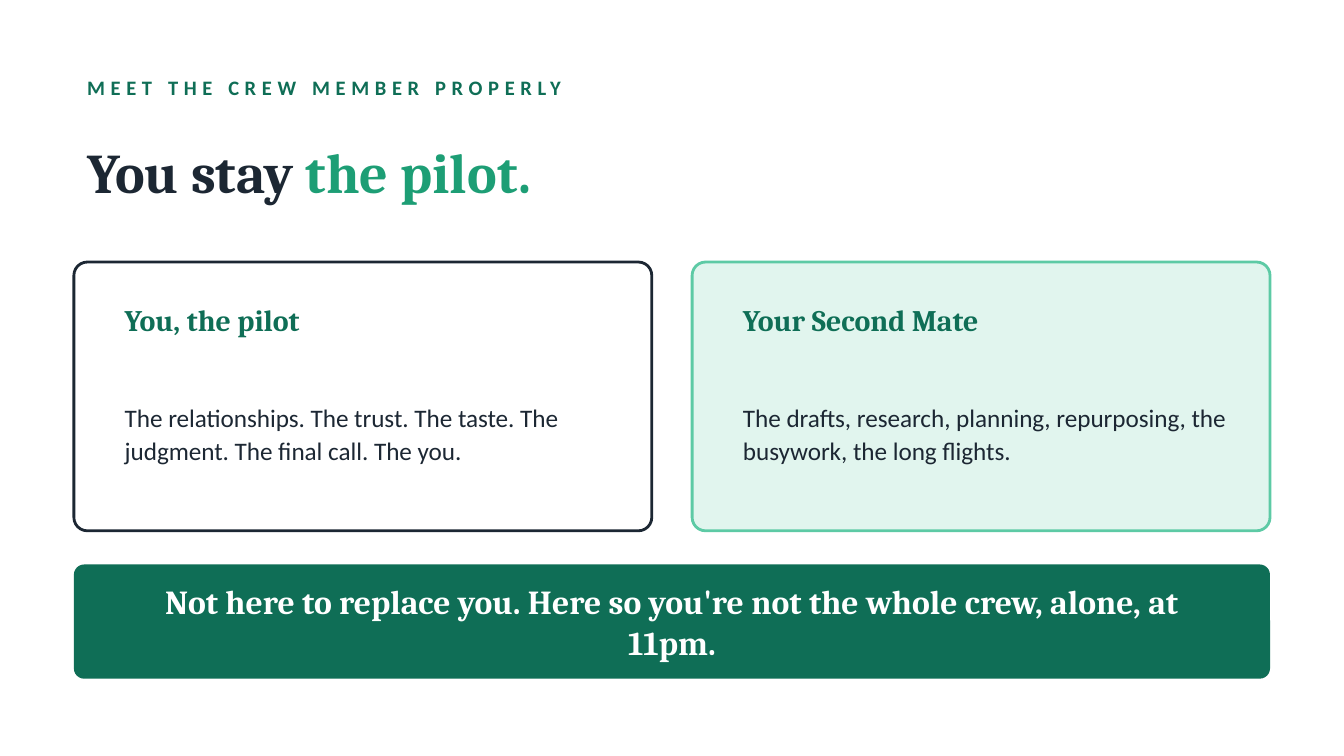
from typing import NamedTuple, Optional

from pptx import Presentation
from pptx.dml.color import RGBColor
from pptx.enum.shapes import MSO_SHAPE as Preset
from pptx.enum.text import MSO_ANCHOR as Anchor, PP_ALIGN as Align
from pptx.slide import Slide
from pptx.util import Inches, Pt

COLORS = {
    "ink": "1C2733",
    "forest": "0F6E56",
    "green": "1D9E75",
    "mint": "5DCAA5",
    "pale": "E1F5EE",
    "white": "FFFFFF",
}
SLIDE_WIDTH = 10
SLIDE_HEIGHT = SLIDE_WIDTH * 9 / 16
MARGIN, GUTTER, COLUMNS = 0.55, 0.3, 2
CONTENT_WIDTH = SLIDE_WIDTH - 2 * MARGIN
COLUMN_WIDTH = (CONTENT_WIDTH - (COLUMNS - 1) * GUTTER) / COLUMNS
CARD_TOP, CARD_HEIGHT = 1.95, 2
CARD_INDENT, CARD_TEXT_WIDTH = 0.28, 3.8
BANNER_TOP, BANNER_HEIGHT, BANNER_INSET = 4.2, 0.85, 0.25


class Box(NamedTuple):
    left: float
    top: float
    width: float
    height: float


class Words(NamedTuple):
    text: str
    size: float
    color: str
    font: str = "Cambria"
    bold: bool = True
    tracking: float = 0


class Card(NamedTuple):
    heading: str
    body: str
    fill: str
    outline: str


def rgb(name: str) -> RGBColor:
    return RGBColor.from_string(COLORS[name])


def add_words(slide: Slide, box: Box, phrases: list[Words],
              align: Align = Align.LEFT, leading: Optional[float] = None) -> None:
    frame = slide.shapes.add_textbox(*map(Inches, box)).text_frame
    frame.word_wrap = True
    frame.vertical_anchor = Anchor.MIDDLE
    paragraph = frame.paragraphs[0]
    paragraph.alignment = align
    if leading:
        paragraph.line_spacing = leading
    for phrase in phrases:
        run = paragraph.add_run()
        run.text = phrase.text
        run.font.name = phrase.font
        run.font.size = Pt(phrase.size)
        run.font.bold = phrase.bold
        run.font.color.rgb = rgb(phrase.color)
        if phrase.tracking:
            run.font._element.set("spc", str(round(phrase.tracking * 100)))


def add_panel(slide: Slide, box: Box, rounding: float, fill: str,
              outline: Optional[str] = None) -> None:
    panel = slide.shapes.add_shape(Preset.ROUNDED_RECTANGLE, *map(Inches, box))
    panel.shadow.inherit = False
    panel.adjustments[0] = rounding
    panel.fill.solid()
    panel.fill.fore_color.rgb = rgb(fill)
    if outline:
        panel.line.color.rgb = rgb(outline)
        panel.line.width = Pt(1.5)
    else:
        panel.line.fill.background()


def add_card(slide: Slide, column: int, card: Card) -> None:
    left = MARGIN + column * (COLUMN_WIDTH + GUTTER)
    text_left = left + CARD_INDENT
    add_panel(slide, Box(left, CARD_TOP, COLUMN_WIDTH, CARD_HEIGHT),
              0.05, card.fill, card.outline)
    add_words(slide, Box(text_left, CARD_TOP + 0.18, CARD_TEXT_WIDTH, 0.5),
              [Words(card.heading, 16, "forest")])
    add_words(slide, Box(text_left, CARD_TOP + 0.72, CARD_TEXT_WIDTH, 1.1),
              [Words(card.body, 13.5, "ink", "Calibri", False)], leading=1.1)


def main() -> None:
    deck = Presentation()
    deck.slide_width, deck.slide_height = Inches(SLIDE_WIDTH), Inches(SLIDE_HEIGHT)
    slide = deck.slides.add_slide(deck.slide_layouts[6])
    slide.background.fill.solid()
    slide.background.fill.fore_color.rgb = rgb("white")

    add_words(slide, Box(MARGIN, 0.5, CONTENT_WIDTH, 0.3),
              [Words("MEET THE CREW MEMBER PROPERLY", 11, "forest", "Calibri", tracking=3)])
    add_words(slide, Box(MARGIN, 0.85, CONTENT_WIDTH, 0.85),
              [Words("You stay ", 30, "ink"), Words("the pilot.", 30, "green")])

    cards = [
        Card("You, the pilot",
             "The relationships. The trust. The taste. The judgment. The final call. The you.",
             "white", "ink"),
        Card("Your Second Mate",
             "The drafts, research, planning, repurposing, the busywork, the long flights.",
             "pale", "mint"),
    ]
    for column, card in enumerate(cards):
        add_card(slide, column, card)

    add_panel(slide, Box(MARGIN, BANNER_TOP, CONTENT_WIDTH, BANNER_HEIGHT), 0.09, "forest")
    add_words(slide, Box(MARGIN + BANNER_INSET, BANNER_TOP,
                         CONTENT_WIDTH - 2 * BANNER_INSET, BANNER_HEIGHT),
              [Words("Not here to replace you. Here so you're not the whole crew, alone, at 11pm.",
                     18, "white")], Align.CENTER)

    deck.save("out.pptx")


if __name__ == "__main__":
    main()
